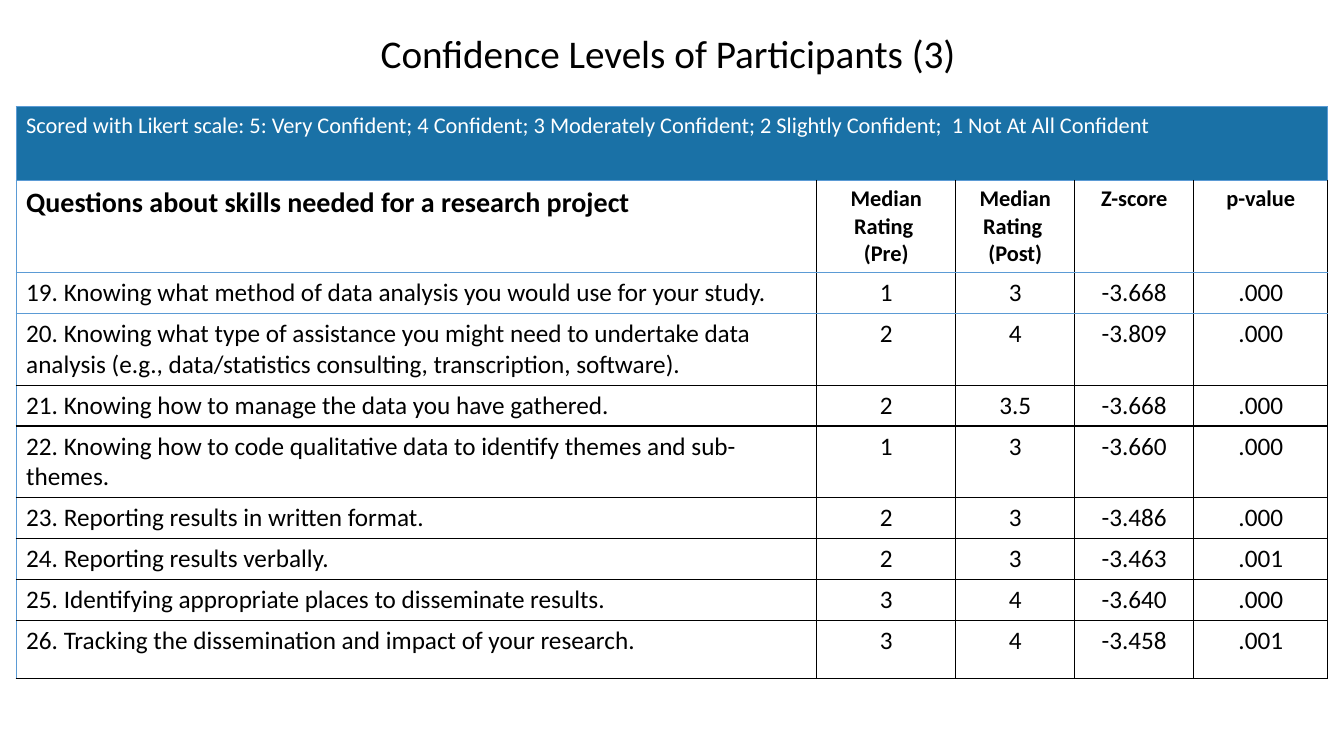
from lxml import etree
from pptx import Presentation
from pptx import util as u
from pptx.dml.color import RGBColor
from pptx.enum import text
from pptx.oxml import ns

# Content
TITLE = "Confidence Levels of Participants (3) "
SCALE = ("Scored with Likert scale: 5: Very Confident; 4 Confident; "
         "3 Moderately Confident; 2 Slightly Confident;  1 Not At All Confident")
HEADINGS = ("Questions about skills needed for a research project",
            "Median Rating \n(Pre)", "Median Rating \n(Post)", "Z-score", "p-value")
RATINGS = [
    ("19. Knowing what method of data analysis you would use for your study.",
     "1", "3", "-3.668", ".000"),
    ("20. Knowing what type of assistance you might need to undertake data analysis "
     "(e.g., data/statistics consulting, transcription, software).",
     "2", "4", "-3.809", ".000"),
    ("21. Knowing how to manage the data you have gathered.", "2", "3.5", "-3.668", ".000"),
    ("22. Knowing how to code qualitative data to identify themes and sub-themes.",
     "1", "3", "-3.660", ".000"),
    ("23. Reporting results in written format.", "2", "3", "-3.486", ".000"),
    ("24. Reporting results verbally.", "2", "3", "-3.463", ".001"),
    ("25. Identifying appropriate places to disseminate results.",
     "3", "4", "-3.640", ".000"),
    ("26. Tracking the dissemination and impact of your research.",
     "3", "4", "-3.458", ".001"),
]
ROWS = [(SCALE, "", "", "", ""), HEADINGS, *RATINGS]

# Format
BLACK = RGBColor(0x00, 0x00, 0x00)
WHITE = RGBColor(0xFF, 0xFF, 0xFF)
BANNER_BLUE = RGBColor(0x1A, 0x71, 0xA6)
LINE_BLUE = RGBColor(0x5B, 0x9B, 0xD5)
TITLE_FONT = {"name": "Calibri", "size": u.Pt(28), "color": BLACK}
BANNER_FONT = {"name": "Calibri", "size": u.Pt(16), "color": WHITE, "bold": False}
QUESTION_FONT = {"name": "Calibri", "size": u.Pt(20), "color": BLACK, "bold": True}
HEADING_FONT = {**QUESTION_FONT, "size": u.Pt(16)}
BODY_FONT = {"name": "Calibri", "size": u.Pt(18), "color": BLACK, "bold": False}

# Grid, in inches
COLUMN_WIDTHS = (7.94, 1.38, 1.18, 1.18, 1.33)
ONE_LINE, TWO_LINES = 0.38, 0.66
ROW_HEIGHTS = (0.73, 0.85, ONE_LINE, TWO_LINES, ONE_LINE, TWO_LINES,
               ONE_LINE, ONE_LINE, ONE_LINE, 0.58)
LAST_BLUE_LINE = 3  # horizontal grid lines down to this one are blue


def write(frame, content, font, alignment):
    frame.text = content
    for paragraph in frame.paragraphs:
        paragraph.alignment = alignment
        for run in paragraph.runs:
            for name, value in font.items():
                if name == "color":
                    run.font.color.rgb = value
                else:
                    setattr(run.font, name, value)


def set_borders(cell, colors):
    properties = cell._tc.get_or_add_tcPr()
    for position, (side, color) in enumerate(colors.items()):
        line = etree.Element(ns.qn(f"a:ln{side}"), w=str(u.Pt(1)))
        fill = etree.SubElement(line, ns.qn("a:solidFill"))
        etree.SubElement(fill, ns.qn("a:srgbClr"), val=str(color))
        properties.insert(position, line)


def font_for(row, column):
    if row == 0:
        return BANNER_FONT
    if row == 1:
        return HEADING_FONT if column else QUESTION_FONT
    return BODY_FONT


presentation = Presentation()
presentation.slide_width, presentation.slide_height = u.Inches(13.33), u.Inches(7.5)
slide = presentation.slides.add_slide(presentation.slide_layouts[6])

# Ratings table
table = slide.shapes.add_table(
    len(ROWS), len(COLUMN_WIDTHS), u.Inches(0.16), u.Inches(1.06),
    u.Inches(sum(COLUMN_WIDTHS)), u.Inches(sum(ROW_HEIGHTS))).table
table.first_row = table.horz_banding = False
for column, width in zip(table.columns, COLUMN_WIDTHS):
    column.width = u.Inches(width)
for row, height in zip(table.rows, ROW_HEIGHTS):
    row.height = u.Inches(height)

for r, values in enumerate(ROWS):
    for c, value in enumerate(values):
        cell = table.cell(r, c)
        alignment = text.PP_ALIGN.CENTER if r and c else text.PP_ALIGN.LEFT
        write(cell.text_frame, value, font_for(r, c), alignment)
        if r == 0:
            cell.fill.solid()
            cell.fill.fore_color.rgb = BANNER_BLUE
        else:
            cell.fill.background()
        set_borders(cell, {
            "L": LINE_BLUE if r == 0 or c == 0 else BLACK,
            "R": LINE_BLUE if r == 0 else BLACK,
            "T": LINE_BLUE if r <= LAST_BLUE_LINE else BLACK,
            "B": LINE_BLUE if r + 1 <= LAST_BLUE_LINE else BLACK,
        })
table.cell(0, 0).merge(table.cell(0, len(COLUMN_WIDTHS) - 1))

# Title
title = slide.shapes.add_textbox(u.Inches(0.32), u.Inches(0.24), u.Inches(12.7), u.Inches(0.57))
title.text_frame.word_wrap = True
title.text_frame.auto_size = text.MSO_AUTO_SIZE.SHAPE_TO_FIT_TEXT
write(title.text_frame, TITLE, TITLE_FONT, text.PP_ALIGN.CENTER)

presentation.save("out.pptx")
